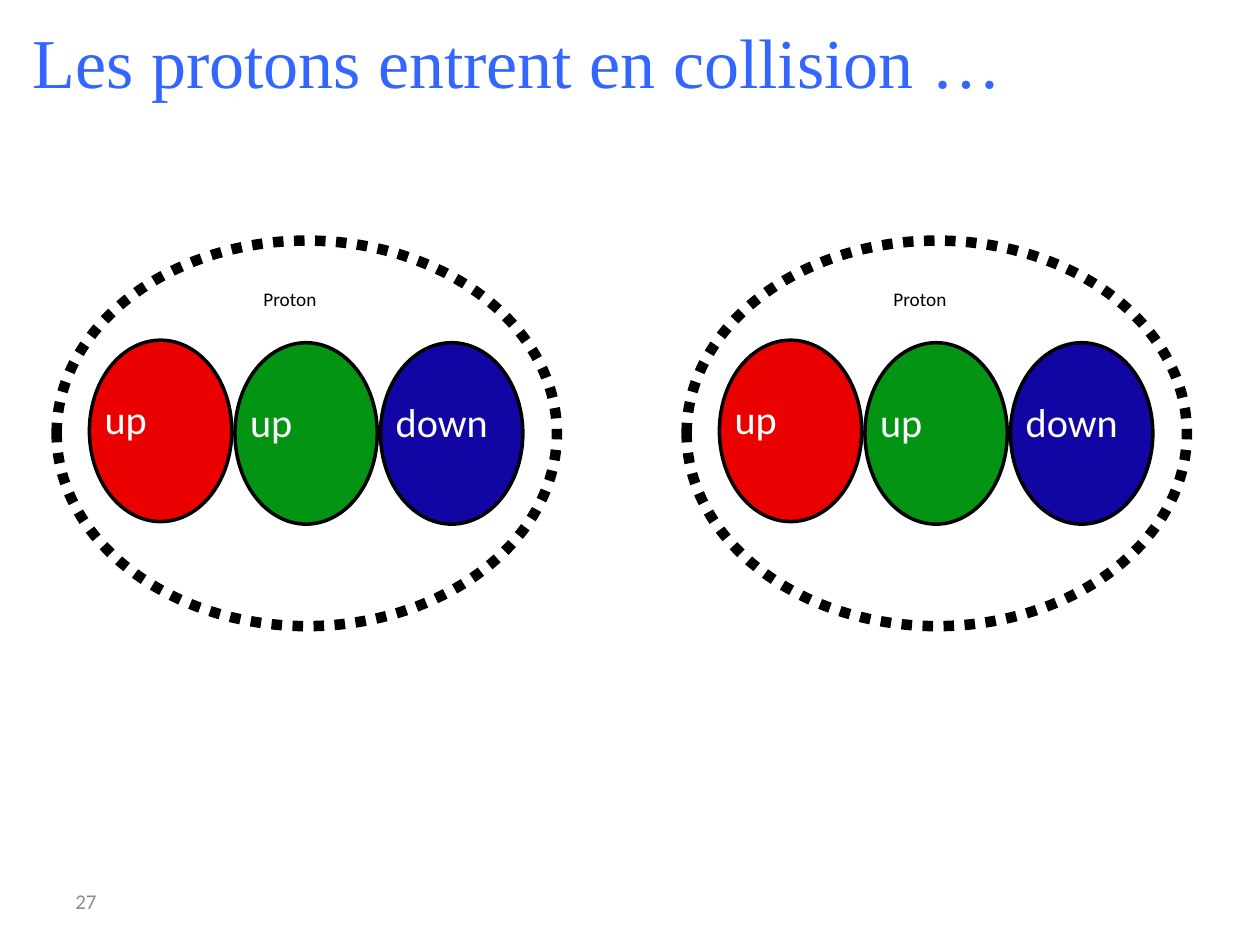
from typing import NamedTuple, Optional

from pptx import Presentation
from pptx.dml.color import RGBColor
from pptx.enum.dml import MSO_LINE
from pptx.enum.shapes import MSO_SHAPE
from pptx.enum.text import MSO_ANCHOR
from pptx.util import Inches, Pt

ELLIPSE = MSO_SHAPE.OVAL
DOTTED = MSO_LINE.ROUND_DOT  # stored as sysDot
TOP, MIDDLE = MSO_ANCHOR.TOP, MSO_ANCHOR.MIDDLE

BLACK = RGBColor(0x00, 0x00, 0x00)
WHITE = RGBColor(0xFF, 0xFF, 0xFF)
GRAY = RGBColor(0x8C, 0x8C, 0x8C)
TITLE_BLUE = RGBColor(0x33, 0x66, 0xFF)
RED = RGBColor(0xEB, 0x00, 0x00)
GREEN = RGBColor(0x02, 0x94, 0x12)
BLUE = RGBColor(0x11, 0x06, 0xA3)


class Box(NamedTuple):
    left: float
    top: float
    width: float
    height: float

    def lengths(self) -> list:
        return [Inches(value) for value in self]


class Quark(NamedTuple):
    flavour: str
    color: RGBColor
    top: float


QUARKS = [
    Quark("up", RED, 2.70),
    Quark("up", GREEN, 2.72),
    Quark("down", BLUE, 2.72),
]
PROTON_LEFTS = [0.45, 5.45]
QUARK_OFFSET = 0.26
QUARK_STEP = 1.155


def add_text(shapes, text: str, box: Box, *, size: float, color: RGBColor,
             font: str = "Calibri", anchor=TOP,
             inset_x: float = 0, inset_y: float = 0) -> None:
    text_frame = shapes.add_textbox(*box.lengths()).text_frame
    text_frame.word_wrap = True
    text_frame.vertical_anchor = anchor
    text_frame.margin_left = text_frame.margin_right = Inches(inset_x)
    text_frame.margin_top = text_frame.margin_bottom = Inches(inset_y)
    run = text_frame.paragraphs[0].add_run()
    run.text = text
    run.font.name = font
    run.font.size = Pt(size)
    run.font.color.rgb = color


def add_ellipse(shapes, box: Box, *, fill: Optional[RGBColor] = None,
                line_width: float = 2, dash=None) -> None:
    shape = shapes.add_shape(ELLIPSE, *box.lengths())
    shape.shadow.inherit = False
    if fill is None:
        shape.fill.background()
    else:
        shape.fill.solid()
        shape.fill.fore_color.rgb = fill
    shape.line.color.rgb = BLACK
    shape.line.width = Pt(line_width)
    if dash is not None:
        shape.line.dash_style = dash


def add_proton(slide, left: float) -> None:
    shapes = slide.shapes.add_group_shape().shapes
    add_ellipse(shapes, Box(left, 1.91, 3.97, 3.06), line_width=6, dash=DOTTED)
    add_text(shapes, "Proton", Box(left + 1.64, 2.28, 0.61, 0.31),
             size=11, color=BLACK)
    for index, quark in enumerate(QUARKS):
        quark_left = left + QUARK_OFFSET + index * QUARK_STEP
        add_ellipse(shapes, Box(quark_left, quark.top, 1.13, 1.44),
                    fill=quark.color)
        add_text(shapes, quark.flavour,
                 Box(quark_left + 0.12, quark.top + 0.43, 0.91, 0.47),
                 size=23, color=WHITE)


def main() -> None:
    presentation = Presentation()
    presentation.slide_width = Inches(10)
    presentation.slide_height = Inches(7.5)
    slide = presentation.slides.add_slide(presentation.slide_layouts[6])

    # Slide number
    add_text(slide.shapes, "27", Box(0.5, 6.95, 2.33, 0.4), size=12,
             color=GRAY, anchor=MIDDLE, inset_x=0.1, inset_y=0.05)

    # Colliding protons
    for left in PROTON_LEFTS:
        add_proton(slide, left)

    # Title
    add_text(slide.shapes, "Les protons entrent en collision …",
             Box(0.26, 0.15, 9.98, 1.04), size=40, color=TITLE_BLUE,
             font="Times New Roman")

    presentation.save("out.pptx")


if __name__ == "__main__":
    main()
